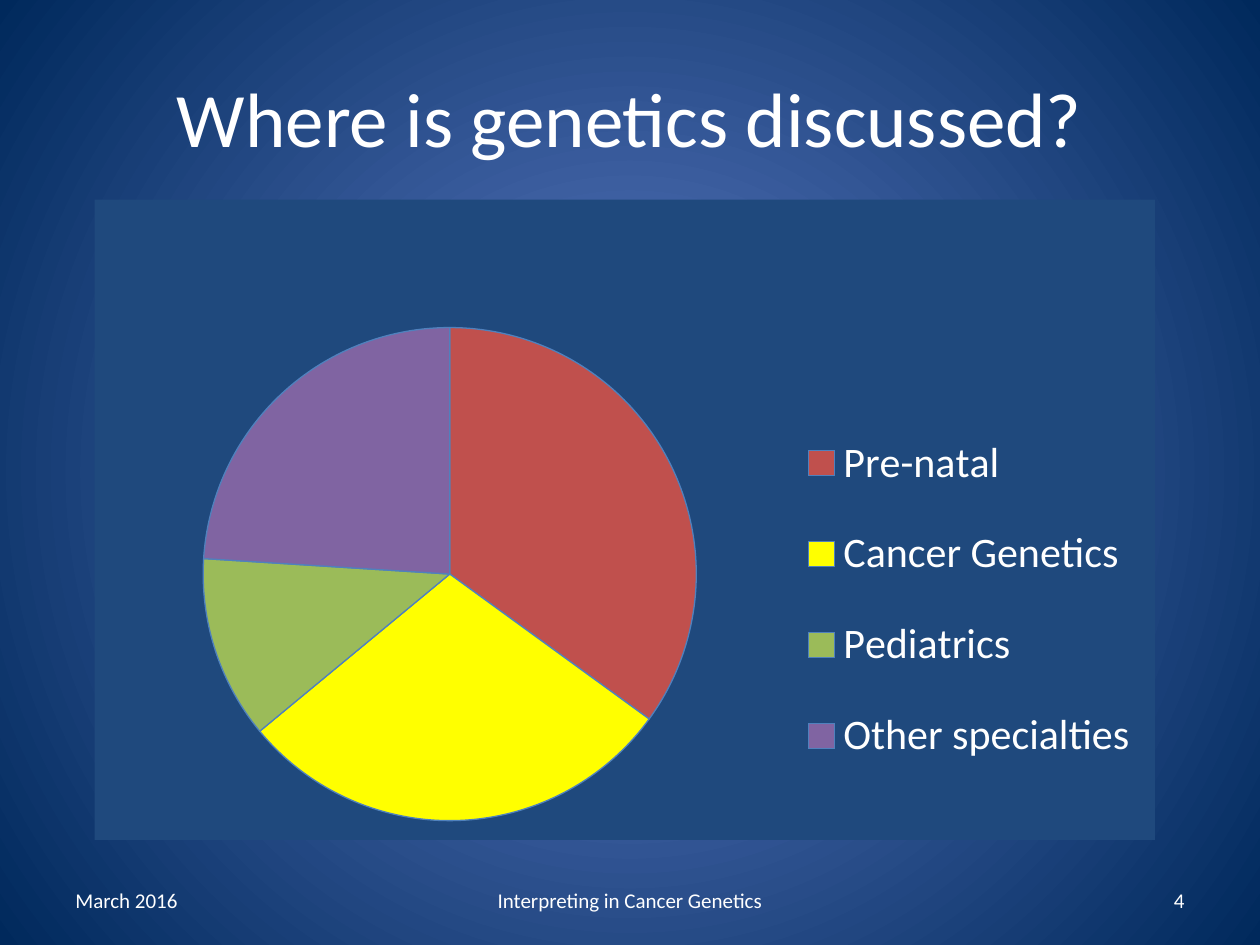
from lxml import etree
from pptx import Presentation
from pptx.chart.data import CategoryChartData
from pptx.dml.color import RGBColor
from pptx.enum.chart import XL_CHART_TYPE, XL_LEGEND_POSITION
from pptx.enum.text import MSO_ANCHOR, PP_ALIGN
from pptx.oxml import parse_xml
from pptx.oxml.ns import nsdecls, qn
from pptx.util import Pt

PIE = XL_CHART_TYPE.PIE
LEGEND_RIGHT = XL_LEGEND_POSITION.RIGHT
MIDDLE = MSO_ANCHOR.MIDDLE
LEFT, CENTER, RIGHT = PP_ALIGN.LEFT, PP_ALIGN.CENTER, PP_ALIGN.RIGHT

PX = 9525  # EMU per px, 96 px to the inch
COLORS = {
    "text": "FFFFFF", "panel": "1F497D", "edge": "4F81BD",
    "glow": "5E7CC5", "night": "00295C",
    "prenatal": "C0504D", "cancer": "FFFF00",
    "pediatrics": "9BBB59", "other": "8064A2",
}
SLICES = [
    ("Pre-natal", 35, "prenatal"),
    ("Cancer Genetics", 29, "cancer"),
    ("Pediatrics", 12, "pediatrics"),
    ("Other specialties", 24, "other"),
]
FOOTERS = [
    ("March 2016", 48, 224, LEFT),
    ("Interpreting in Cancer Genetics", 328, 304, CENTER),
    ("4", 688, 224, RIGHT),
]


def rgb(name):
    return RGBColor.from_string(COLORS[name])


def px(*lengths):
    return [n * PX for n in lengths]


def manual_layout(x, y, w, h, inner=False):
    """Chart layout given as fractions of the chart area."""
    layout = parse_xml(f"<c:layout {nsdecls('c')}><c:manualLayout/></c:layout>")
    values = {"layoutTarget": "inner"} if inner else {}
    values.update(xMode="edge", yMode="edge", x=x, y=y, w=w, h=h)
    for tag, value in values.items():
        etree.SubElement(layout[0], qn(f"c:{tag}")).set("val", str(value))
    return layout


class Deck:
    font = "Calibri"

    def __init__(self, prs):
        self.s = prs.slides.add_slide(prs.slide_layouts[5])

    def style(self, font, size):
        formats = {"name": self.font, "size": Pt(size)}
        for key, value in formats.items():
            setattr(font, key, value)
        font.color.rgb = rgb("text")

    def background(self, inner, outer):
        fill = self.s.background.fill
        fill.gradient()
        for stop, name, pos in zip(fill.gradient_stops, (inner, outer), (0, 1)):
            stop.color.rgb = rgb(name)
            stop.position = pos
        # Radial instead of linear
        lin = next(self.s.element.iter(qn("a:lin")))
        lin.getparent().replace(lin, parse_xml(
            f'<a:path {nsdecls("a")} path="circle"><a:fillToRect '
            'l="50000" t="50000" r="50000" b="50000"/></a:path>'))

    def put_text(self, sp, text, size, align):
        tf = sp.text_frame
        tf.word_wrap = True
        tf.vertical_anchor = MIDDLE
        p = tf.paragraphs[0]
        p.alignment = align
        r = p.add_run()
        r.text = text
        self.style(r.font, size)

    def title(self, text, *box):
        sp = self.s.shapes.title
        sp.left, sp.top, sp.width, sp.height = px(*box)
        self.put_text(sp, text, 44, CENTER)

    def label(self, text, box, align):
        self.put_text(self.s.shapes.add_textbox(*px(*box)), text, 12, align)

    def pie(self, slices, *box):
        data = CategoryChartData()
        data.categories = [name for name, _, _ in slices]
        data.add_series("Share", [value for _, value, _ in slices])
        chart = self.s.shapes.add_chart(PIE, *px(*box), data).chart
        chart.has_title = False
        self.style(chart.font, 24)

        # Slices
        plot = chart.plots[0]
        plot.vary_by_categories = True
        for i, (_, _, color) in enumerate(slices):
            fmt = plot.series[0].points[i].format
            fmt.fill.solid()
            fmt.fill.fore_color.rgb = rgb(color)
            fmt.line.color.rgb = rgb("edge")
            fmt.line.width = Pt(0.75)

        # Legend
        chart.has_legend = True
        legend = chart.legend
        legend.position = LEGEND_RIGHT
        legend.include_in_layout = False
        self.style(legend.font, 24)

        # Placement of plot and legend
        area = next(chart.element.iter(qn("c:plotArea")))
        key = next(chart.element.iter(qn("c:legend")))
        for parent in (area, key):
            for old in parent.findall(qn("c:layout")):
                parent.remove(old)
        area.insert(0, manual_layout(0.1, 0.2, 0.47, 0.77, inner=True))
        key.find(qn("c:legendPos")).addnext(manual_layout(0.66, 0.31, 0.33, 0.63))

        # Panel behind the chart
        chart.element.find(qn("c:chart")).addnext(parse_xml(
            f'<c:spPr {nsdecls("c", "a")}><a:solidFill><a:srgbClr '
            f'val="{COLORS["panel"]}"/></a:solidFill>'
            '<a:ln><a:noFill/></a:ln></c:spPr>'))


def main():
    prs = Presentation()
    prs.slide_width, prs.slide_height = px(960, 720)
    deck = Deck(prs)
    deck.background("glow", "night")
    deck.title("Where is genetics discussed?", 48, 29, 864, 120)
    for text, left, width, align in FOOTERS:
        deck.label(text, (left, 667, width, 38), align)
    deck.pie(SLICES, 72, 152, 808, 488)
    prs.save("out.pptx")


if __name__ == "__main__":
    main()
